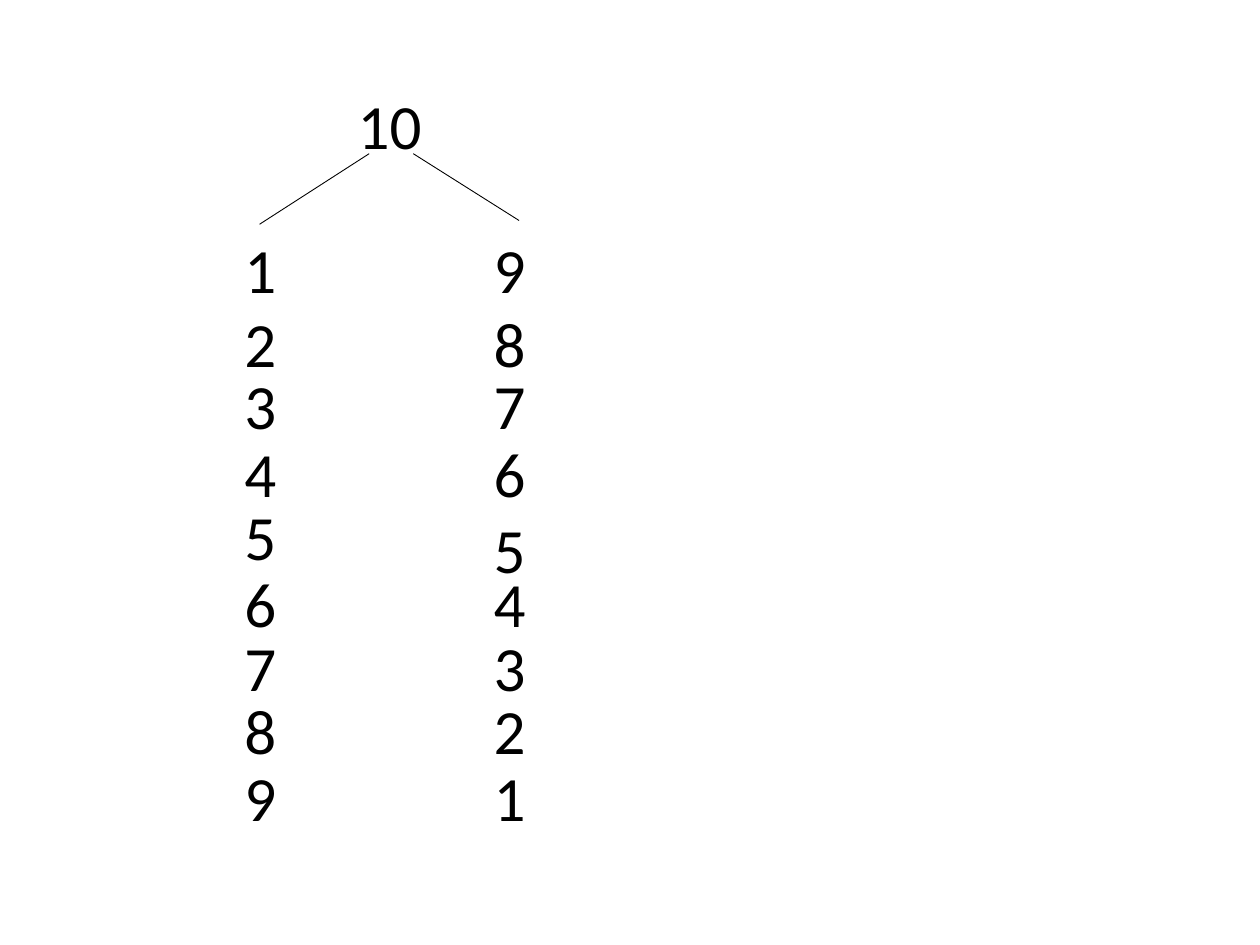
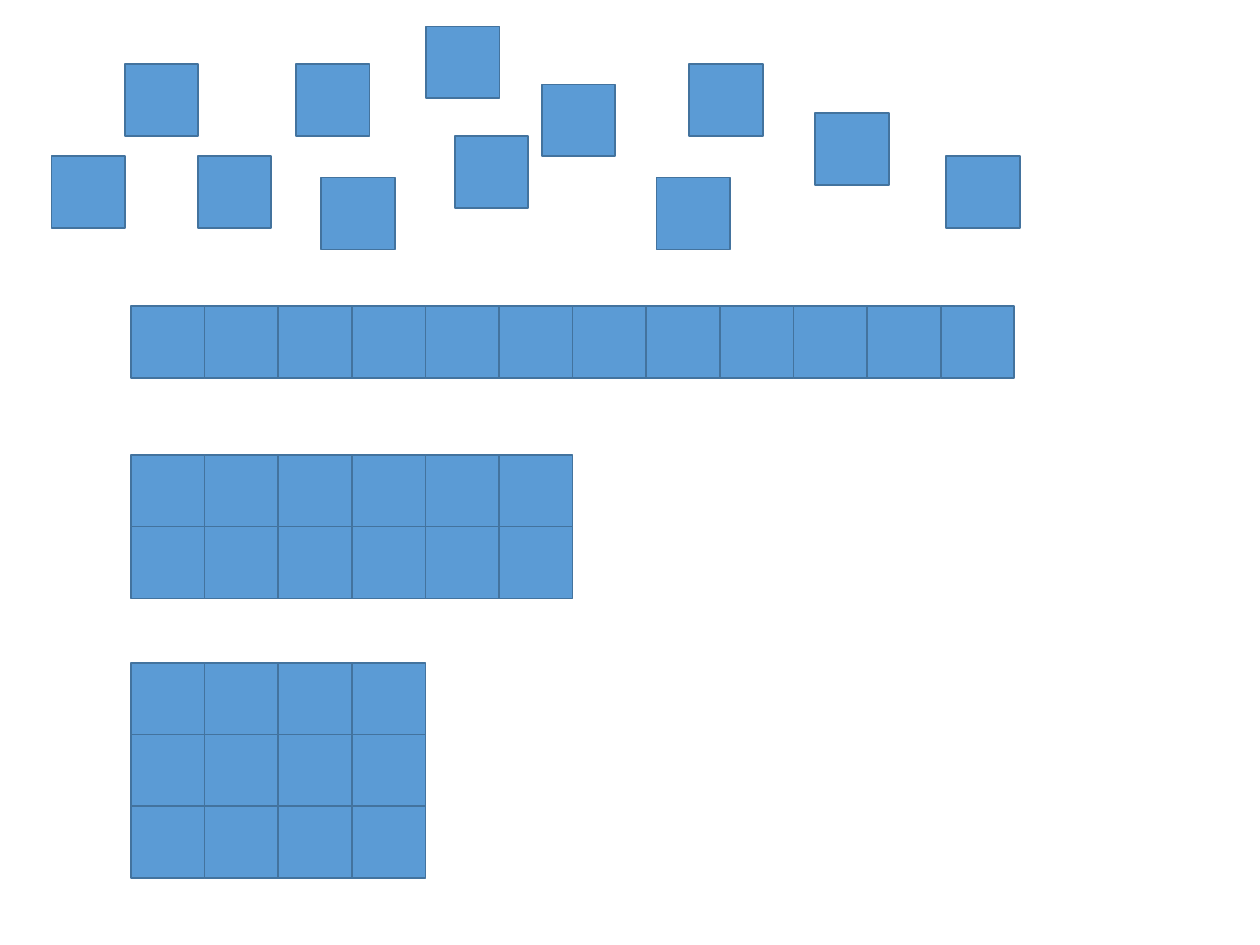
from pptx import Presentation
from pptx.dml.color import RGBColor
from pptx.enum.shapes import MSO_CONNECTOR as Connector, MSO_SHAPE as Shape
from pptx.enum.text import MSO_AUTO_SIZE as AutoSize
from pptx.oxml.ns import qn
from pptx.util import Inches, Pt
from lxml import etree

COLORS = {"text": "000000", "branch": "000000", "tile": "5B9BD5", "tile_edge": "43739E"}
FONT = "Calibri"

WHOLE = 10
WHOLE_LEFT, WHOLE_TOP = 2.74, 0.64
LEFT_PART, RIGHT_PART = 1.84, 3.82
# Top of the left and the right number in each row of the number bond
BOND_ROWS = [
    (1.78, 1.78), (2.37, 2.37), (2.86, 2.86), (3.4, 3.4), (3.9, 4),
    (4.43, 4.43), (4.94, 4.94), (5.44, 5.44), (5.97, 5.97),
]
BRANCHES = [((2.93, 1.22), (2.06, 1.78)), ((3.28, 1.22), (4.12, 1.75))]

TILE_WIDTH = 7.01 / 12
TILE_HEIGHT = 0.57
ARRAY_LEFT = 1.04
# Top, rows and columns of each array of twelve tiles
ARRAYS = [(2.43, 1, 12), (3.61, 2, 6), (5.26, 3, 4)]
LOOSE_TILES = [
    (0.99, 0.51), (1.57, 1.24), (0.41, 1.24), (3.61, 1.08), (2.35, 0.51), (3.38, 0.21),
    (4.3, 0.67), (2.55, 1.41), (5.21, 1.41), (5.47, 0.51), (6.47, 0.9), (7.51, 1.24),
]


def rgb(name):
    return RGBColor.from_string(COLORS[name])


def add_number(shapes, number, left, top):
    box = shapes.add_textbox(Inches(left), Inches(top), Inches(0.91), Inches(0.71))
    frame = box.text_frame
    frame.word_wrap = True
    frame.auto_size = AutoSize.SHAPE_TO_FIT_TEXT
    frame.text = str(number)
    font = frame.paragraphs[0].runs[0].font
    font.name = FONT
    font.size = Pt(36)
    font.color.rgb = rgb("text")


def add_branch(shapes, start, end):
    ends = [Inches(value) for value in (*start, *end)]
    branch = shapes.add_connector(Connector.STRAIGHT, *ends)
    branch.line.color.rgb = rgb("branch")
    branch.line.width = Pt(0.5)
    etree.SubElement(branch._element.spPr, qn("a:effectLst"))


def add_tile(shapes, left, top):
    tile = shapes.add_shape(
        Shape.RECTANGLE, Inches(left), Inches(top), Inches(TILE_WIDTH), Inches(TILE_HEIGHT)
    )
    tile.shadow.inherit = False
    tile.fill.solid()
    tile.fill.fore_color.rgb = rgb("tile")
    tile.line.color.rgb = rgb("tile_edge")
    tile.line.width = Pt(1)


def add_array(slide, top, rows, columns):
    """Group touching tiles into a rectangle of rows and columns."""
    group = slide.shapes.add_group_shape()
    for row in range(rows):
        for column in range(columns):
            add_tile(group.shapes, ARRAY_LEFT + column * TILE_WIDTH, top + row * TILE_HEIGHT)


def build_number_bonds(slide):
    """Show every pair of whole numbers that adds up to the number on top."""
    add_number(slide.shapes, WHOLE, WHOLE_LEFT, WHOLE_TOP)
    for start, end in BRANCHES:
        add_branch(slide.shapes, start, end)
    for part, (left_top, right_top) in enumerate(BOND_ROWS, start=1):
        pair = slide.shapes.add_group_shape()
        add_number(pair.shapes, part, LEFT_PART, left_top)
        add_number(pair.shapes, WHOLE - part, RIGHT_PART, right_top)


def build_tile_arrays(slide):
    """Show twelve loose tiles and the rectangles they can form."""
    for left, top in LOOSE_TILES:
        add_tile(slide.shapes, left, top)
    for top, rows, columns in ARRAYS:
        add_array(slide, top, rows, columns)


def main():
    deck = Presentation()
    deck.slide_width = Inches(10)
    deck.slide_height = Inches(7.5)
    blank = deck.slide_layouts[6]
    for build in (build_number_bonds, build_tile_arrays):
        build(deck.slides.add_slide(blank))
    deck.save("out.pptx")


if __name__ == "__main__":
    main()
